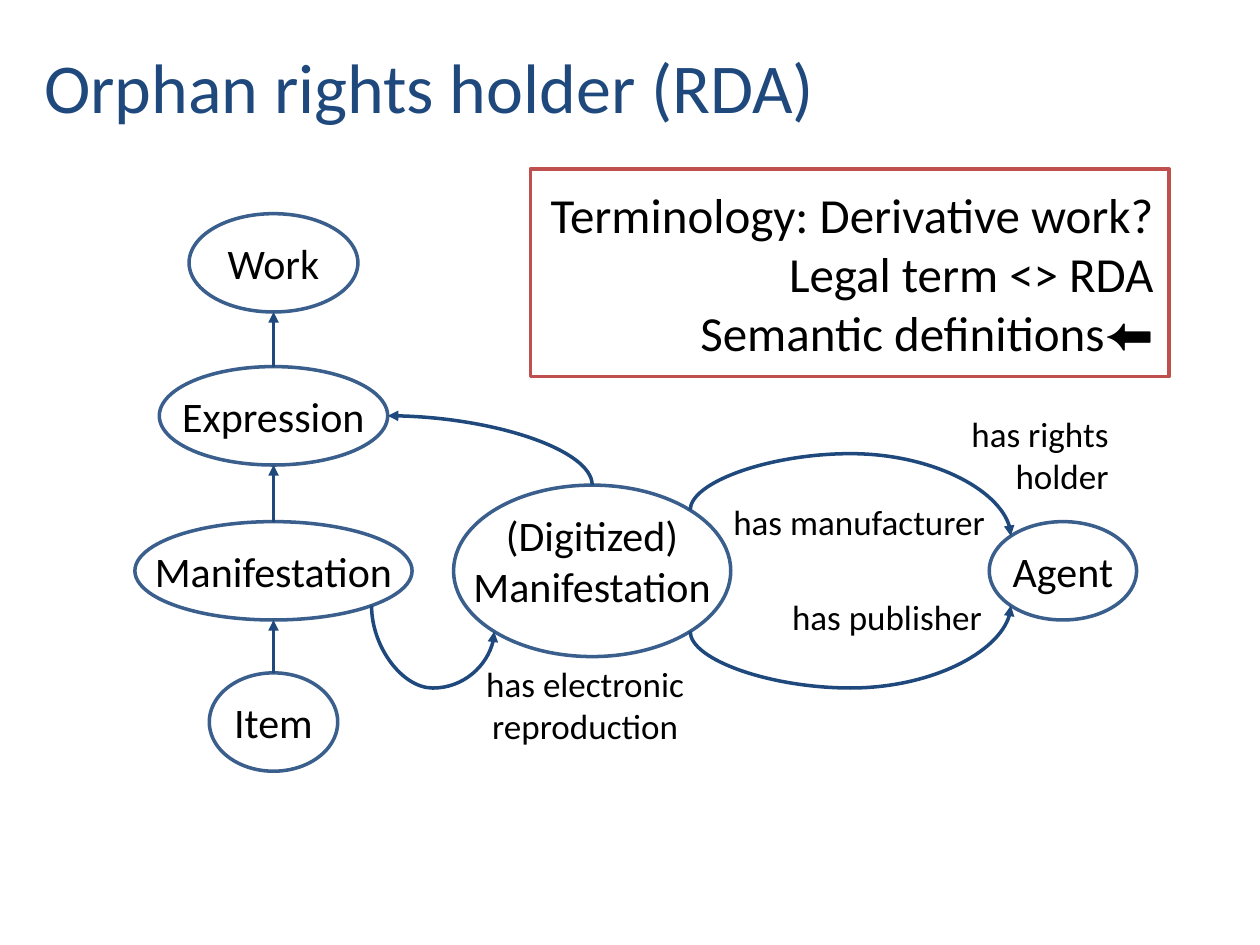
import math

import lxml.etree
import pptx
import pptx.dml.color
import pptx.enum.shapes
import pptx.enum.text
import pptx.oxml.ns
import pptx.util

Pt = pptx.util.Pt
RGBColor = pptx.dml.color.RGBColor
qn = pptx.oxml.ns.qn
ALIGN = pptx.enum.text.PP_ALIGN
ANCHOR = pptx.enum.text.MSO_ANCHOR
SHAPE = pptx.enum.shapes.MSO_SHAPE
CURVE = pptx.enum.shapes.MSO_CONNECTOR.CURVE

NAVY = RGBColor(0x1F, 0x49, 0x7D)
OUTLINE = RGBColor(0x3A, 0x5F, 0x8C)
RED = RGBColor(0xC0, 0x50, 0x4D)
BLACK = RGBColor(0, 0, 0)


class Diagram:
    """Holds the style and the current slide; all lengths are in points."""

    font = "Calibri"
    line_width = 2

    def __init__(self, slide):
        self.s = slide

    def set_text(self, sp, lines, size, color=BLACK, align=ALIGN.CENTER,
                 inset=3, bottom=None):
        tf = sp.text_frame
        frame = {
            "word_wrap": False,
            "auto_size": pptx.enum.text.MSO_AUTO_SIZE.NONE,
            "vertical_anchor": ANCHOR.MIDDLE,
            "margin_left": Pt(inset),
            "margin_right": Pt(inset),
            "margin_top": Pt(inset),
            "margin_bottom": Pt(inset if bottom is None else bottom),
        }
        for name, value in frame.items():
            setattr(tf, name, value)
        for i, line in enumerate(lines):
            p = tf.paragraphs[0] if i == 0 else tf.add_paragraph()
            p.alignment = align
            r = p.add_run()
            r.text = line
            for name, value in {"name": self.font, "size": Pt(size)}.items():
                setattr(r.font, name, value)
            r.font.color.rgb = color

    def title(self, text, *box):
        sp = self.s.shapes.title
        for name, value in zip(("left", "top", "width", "height"), box):
            setattr(sp, name, Pt(value))
        self.set_text(sp, [text], 40, NAVY, ALIGN.LEFT, inset=7.2)

    def outline(self, kind, color, *box):
        sp = self.s.shapes.add_shape(kind, *map(Pt, box))
        sp.shadow.inherit = False
        sp.fill.background()
        sp.line.color.rgb = color
        sp.line.width = Pt(self.line_width)
        return sp

    def node(self, lines, cx, cy, w, h=56.2, bottom=None):
        """Draw a labelled ellipse and return its centre and radii."""
        sp = self.outline(SHAPE.OVAL, OUTLINE, cx - w / 2, cy - h / 2, w, h)
        self.set_text(sp, lines, 24, bottom=bottom)
        return cx, cy, w / 2, h / 2

    def box(self, lines, *box):
        sp = self.outline(SHAPE.RECTANGLE, RED, *box)
        self.set_text(sp, lines, 28, align=ALIGN.RIGHT, inset=9)

    def label(self, lines, *box, align=ALIGN.CENTER):
        sp = self.s.shapes.add_textbox(*map(Pt, box))
        self.set_text(sp, lines, 20, align=align)

    def curve(self, start, end, rot, bulge_y=None, preset="curvedConnector3"):
        """Draw a curved arrow that leaves vertically; rot is 90 or 270."""
        (x1, y1), (x2, y2) = start, end
        cx, cy = (x1 + x2) / 2, (y1 + y2) / 2
        turn = 1 if rot == 90 else -1
        # Half extents before the shape is rotated about its centre
        a, b = turn * (y2 - y1) / 2, -turn * (x2 - x1) / 2
        sp = self.s.shapes.add_connector(
            CURVE, Pt(cx - a), Pt(cy - b), Pt(cx + a), Pt(cy + b))
        sp.line.color.rgb = NAVY
        sp.line.width = Pt(self.line_width)
        pr = sp._element.spPr
        pr.find(qn("a:xfrm")).set("rot", str(rot * 60000))
        geom = pr.find(qn("a:prstGeom"))
        geom.set("prst", preset)
        if bulge_y is not None:
            adj = round((bulge_y - y1) / (y2 - y1) * 100000)
            lxml.etree.SubElement(geom.find(qn("a:avLst")), qn("a:gd"),
                                  name="adj1", fmla=f"val {adj}")
        lxml.etree.SubElement(pr.find(qn("a:ln")), qn("a:tailEnd"),
                              type="triangle")
        lxml.etree.SubElement(pr, qn("a:effectLst"))


def site(node, degrees):
    """Point on an ellipse, clockwise from its right end."""
    cx, cy, rx, ry = node
    t = math.radians(degrees)
    return cx + rx * math.cos(t), cy + ry * math.sin(t)


def main():
    prs = pptx.Presentation()
    prs.slide_width, prs.slide_height = Pt(720), Pt(540)
    d = Diagram(prs.slides.add_slide(prs.slide_layouts[5]))
    d.title("Orphan rights holder (RDA)", 18, 21, 459, 55.5)

    # Entities
    column, row = 156.3, 326.2
    work = d.node(["Work"], column, 150.2, 96.5)
    expression = d.node(["Expression"], column, 237.6, 130.5)
    manifestation = d.node(["Manifestation"], column, row, 158.4)
    item = d.node(["Item"], column, 412.6, 73.4)
    digitized = d.node(["(Digitized)", "Manifestation"], 338.4, row, 158.4, 98,
                       bottom=15)
    agent = d.node(["Agent"], 607.4, row, 84.2)

    # Chain from item up to work
    for lower, upper, rot in ((item, manifestation, 270),
                              (manifestation, expression, 90),
                              (expression, work, 90)):
        d.curve(site(lower, 270), site(upper, 90), rot)

    # Relations of the digitized manifestation
    low, high = 393.2, 259.2
    d.curve(site(digitized, 270), site(expression, 0), 270,
            preset="curvedConnector2")
    d.curve(site(manifestation, 45), site(digitized, 135), 270, low)
    d.curve(site(digitized, 45), site(agent, 135), 90, low)
    d.curve(site(digitized, 315), site(agent, 225), 270, high)

    # Relation labels
    d.label(["has publisher"], 449.3, 337, 115.2, 30.2)
    d.label(["has manufacturer"], 415.4, 283, 151.2, 30.2)
    d.label(["has electronic", "reproduction"], 274.3, 375.8, 120.2, 54)
    d.label(["has rights", "holder"], 551.5, 232.6, 85, 54, align=ALIGN.RIGHT)

    # Terminology box
    d.box(["Terminology: Derivative work?", "Legal term <> RDA",
           "Semantic definitions⬅"], 303.1, 96.5, 365, 118.8)

    prs.save("out.pptx")


if __name__ == "__main__":
    main()
